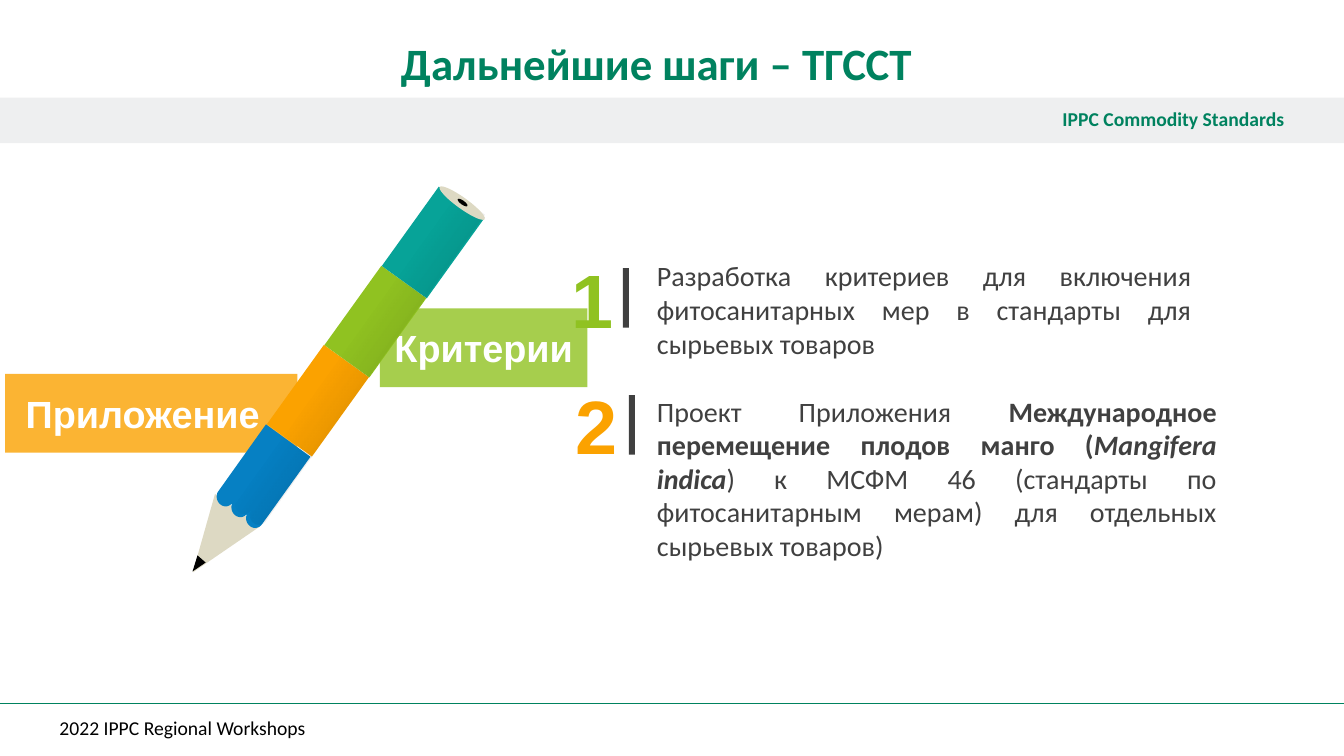
"""Build the slide on the next steps, with a striped pencil and two numbered points."""
import math
from dataclasses import dataclass
from typing import Any

import lxml.etree
import pptx
import pptx.dml.color
import pptx.enum.shapes
import pptx.enum.text
import pptx.oxml.ns
import pptx.util

Pt = pptx.util.Pt
RGBColor = pptx.dml.color.RGBColor
Shape = pptx.enum.shapes.MSO_SHAPE
Align = pptx.enum.text.PP_ALIGN
Anchor = pptx.enum.text.MSO_ANCHOR
AutoSize = pptx.enum.text.MSO_AUTO_SIZE
qn = pptx.oxml.ns.qn

GREEN = RGBColor(0x00, 0x82, 0x5F)
BAND = RGBColor(0xD8, 0xD9, 0xDC)
DARK = RGBColor(0x40, 0x40, 0x40)
WHITE = RGBColor(0xFF, 0xFF, 0xFF)
BLACK = RGBColor(0x00, 0x00, 0x00)
LIME = RGBColor(0x90, 0xC2, 0x21)
ORANGE = RGBColor(0xFB, 0xA2, 0x00)
TEAL = RGBColor(0x07, 0xA3, 0x98)
BLUE = RGBColor(0x06, 0x80, 0xC3)
WOOD = RGBColor(0xDD, 0xD9, 0xC3)

PENCIL_TURN = 215.7
BARREL_TURN = 305.7
Point = tuple[float, float]


@dataclass(frozen=True)
class Box:
    left: float
    top: float
    width: float
    height: float
    turn: float = 0


@dataclass(frozen=True)
class Run:
    text: str
    bold: bool = False
    italic: bool = False


@dataclass(frozen=True)
class Style:
    size: float
    color: RGBColor
    font: str = "Calibri"
    align: Any = Align.LEFT
    anchor: Any = Anchor.TOP
    insets: tuple[float, float, float, float] = (7.2, 3.6, 7.2, 3.6)
    spacing: float = 1.0


@dataclass(frozen=True)
class Label:
    box: Box
    color: RGBColor
    text: str
    align: Any
    left_inset: float


@dataclass(frozen=True)
class Step:
    digit: str
    color: RGBColor
    digit_box: Box
    bar_box: Box
    text_box: Box
    runs: list[Run]


def place(sp: Any, box: Box) -> None:
    sp.left, sp.top, sp.width, sp.height = map(Pt, (box.left, box.top, box.width, box.height))


def write(sp: Any, runs: list[Run], style: Style) -> None:
    tf = sp.text_frame
    tf.word_wrap = True
    tf.auto_size = AutoSize.NONE
    tf.vertical_anchor = style.anchor
    tf.margin_left, tf.margin_top, tf.margin_right, tf.margin_bottom = map(Pt, style.insets)
    p = tf.paragraphs[0]
    p.alignment = style.align
    p.line_spacing = style.spacing
    for run in runs:
        r = p.add_run()
        r.text = run.text
        r.font.name, r.font.size = style.font, Pt(style.size)
        r.font.bold, r.font.italic = run.bold, run.italic
        r.font.color.rgb = style.color


def add_text(shapes: Any, box: Box, runs: list[Run], style: Style) -> None:
    sp = shapes.add_textbox(0, 0, 0, 0)
    place(sp, box)
    write(sp, runs, style)


def paint(sp: Any, color: RGBColor, opacity: int = 100) -> None:
    sp.shadow.inherit = False
    sp.line.fill.background()
    sp.fill.solid()
    sp.fill.fore_color.rgb = color
    if opacity < 100:
        clr = sp._element.spPr.find(qn("a:solidFill"))[0]
        lxml.etree.SubElement(clr, qn("a:alpha"), val=str(opacity * 1000))


def add_preset(shapes: Any, kind: Any, box: Box, color: RGBColor, opacity: int = 100) -> Any:
    sp = shapes.add_shape(kind, 0, 0, 0, 0)
    place(sp, box)
    sp.rotation = box.turn
    paint(sp, color, opacity)
    return sp


def rotate(point: Point, degrees: float) -> Point:
    c, s = math.cos(math.radians(degrees)), math.sin(math.radians(degrees))
    return point[0] * c - point[1] * s, point[0] * s + point[1] * c


def add_outline(shapes: Any, points: list[Point], color: RGBColor) -> Any:
    """Draw a closed outline whose frame is turned along the pencil."""
    local = [tuple(Pt(v) for v in rotate(pt, -PENCIL_TURN)) for pt in points]
    builder = shapes.build_freeform(*local[0])
    builder.add_line_segments(local[1:], close=True)
    sp = builder.convert_to_shape()
    w, h = sp.width, sp.height
    x, y = rotate((sp.left + w / 2, sp.top + h / 2), PENCIL_TURN)
    sp.left, sp.top = round(x - w / 2), round(y - h / 2)
    sp.rotation = PENCIL_TURN
    paint(sp, color)
    return sp


def scallops(dx: float = 0, dy: float = 0) -> list[Point]:
    """Return the three round lobes where the paint meets the wood."""
    lobe = [(187.2, 374.4), (185, 377.3), (181.4, 378), (178.6, 375.8),
            (175.7, 373.7), (175, 369.4), (176.7, 366.7)]
    points = []
    for i in range(3):
        for curve in (lobe[:4], lobe[3:]):
            for t in (k / 8 for k in range(9)):
                weights = [math.comb(3, k) * t**k * (1 - t)**(3 - k) for k in range(4)]
                x, y = (sum(w * pt[a] for w, pt in zip(weights, curve)) for a in (0, 1))
                points.append((x - 10.5 * i + dx, y - 7.7 * i + dy))
    return points


def shade(sp: Any) -> None:
    """Fill with black that fades in across the pencil."""
    sp.fill.gradient()
    grad = sp._element.spPr.find(qn("a:gradFill"))
    stops = grad.find(qn("a:gsLst"))
    for gs in list(stops):
        stops.remove(gs)
    for pos, opacity in ((48, 0), (100, 39)):
        gs = lxml.etree.SubElement(stops, qn("a:gs"), pos=str(pos * 1000))
        clr = lxml.etree.SubElement(gs, qn("a:srgbClr"), val=str(BLACK))
        lxml.etree.SubElement(clr, qn("a:alpha"), val=str(opacity * 1000))
    grad.find(qn("a:lin")).set("ang", str(180 * 60000))


def add_pencil(shapes: Any) -> None:
    pencil = shapes.add_group_shape().shapes
    add_preset(pencil, Shape.ISOSCELES_TRIANGLE, Box(133.9, 359.3, 39.6, 54.7, PENCIL_TURN), WOOD)
    add_outline(pencil, [(190, 303.1), (221.8, 326.2)] + scallops(), BLUE)
    for i, color in enumerate((ORANGE, LIME, TEAL)):
        box = Box(192.2 + 41.04 * i, 266.4 - 56.5 * i, 69.8, 39.6, BARREL_TURN)
        add_preset(pencil, Shape.RECTANGLE, box, color)
    add_outline(pencil, [(141.1, 396.7), (146.9, 401.8), (137.5, 408.2)], BLACK)
    shade(add_outline(pencil, [(314.6, 130.3), (346.3, 153.4)] + scallops(2.9, -2.9), BLACK))
    add_preset(pencil, Shape.OVAL, Box(326.2, 125.3, 7.9, 39.6, BARREL_TURN), WOOD)
    add_preset(pencil, Shape.OVAL, Box(329, 140.4, 2.9, 8.6, BARREL_TURN), BLACK)


LABELS = [
    Label(Box(271.4, 220.3, 148.3, 56.2), LIME, "Критерии", Align.CENTER, 7.2),
    Label(Box(3.6, 267.1, 208.8, 56.2), ORANGE, "Приложение", Align.LEFT, 14.7),
]
STEPS = [
    Step("2", ORANGE, Box(411.1, 270, 33.8, 65.5), Box(449.3, 282.2, 4.3, 42.5),
         Box(462.2, 277.9, 414, 152.6),
         [Run("Проект Приложения "), Run("Международное перемещение плодов манго (", True),
          Run("Mangifera indica", True, True),
          Run(") к МСФМ 46 (стандарты по фитосанитарным мерам) для отдельных сырьевых товаров)")]),
    Step("1", LIME, Box(408.2, 180, 33.8, 65.5), Box(445, 191.5, 4.3, 42.5),
         Box(462.2, 181.4, 396, 104.4),
         [Run("Разработка критериев для включения фитосанитарных мер "
              "в стандарты для сырьевых товаров")]),
]


def main() -> None:
    prs = pptx.Presentation()
    prs.slide_width, prs.slide_height = Pt(960), Pt(540)
    s = prs.slides.add_slide(prs.slide_layouts[5])
    shapes = s.shapes

    rule = shapes.add_connector(pptx.enum.shapes.MSO_CONNECTOR.STRAIGHT,
                                Pt(0), Pt(502.6), Pt(960), Pt(502.6))
    rule.line.color.rgb, rule.line.width = GREEN, Pt(1)
    lxml.etree.SubElement(rule._element.spPr, qn("a:effectLst"))
    edge = (42.5, 3.6, 42.5, 3.6)
    add_text(shapes, Box(0, 508.3, 960, 25.2), [Run("2022 IPPC Regional Workshops")],
             Style(14, BLACK, anchor=Anchor.MIDDLE, insets=edge, spacing=0.9))
    band = add_preset(shapes, Shape.RECTANGLE, Box(0, 69.8, 960, 32.4), BAND, 42)
    write(band, [Run("IPPC Commodity Standards", True)],
          Style(14, GREEN, align=Align.RIGHT, anchor=Anchor.MIDDLE, insets=edge, spacing=0.9))
    place(shapes.title, Box(221.8, 30.2, 480.2, 24.5))
    write(shapes.title, [Run("Дальнейшие шаги – ТГССТ", True)],
          Style(32, GREEN, align=Align.CENTER, insets=(42.5, 0, 28.1, 3.6), spacing=0.9))

    for step in STEPS:
        add_text(shapes, step.text_box, step.runs, Style(20, DARK, align=Align.JUSTIFY))
        add_preset(shapes, Shape.RECTANGLE, step.bar_box, DARK)
        add_text(shapes, step.digit_box, [Run(step.digit, True)],
                 Style(54, step.color, "Arial", anchor=Anchor.MIDDLE, insets=(0, 0, 0, 0)))
    for label in LABELS:
        sp = add_preset(shapes, Shape.RECTANGLE, label.box, label.color, 80)
        write(sp, [Run(label.text, True)],
              Style(27, WHITE, "Arial", label.align, Anchor.MIDDLE,
                    (label.left_inset, 3.6, 7.2, 3.6)))
    add_pencil(shapes)
    prs.save("out.pptx")


if __name__ == "__main__":
    main()
